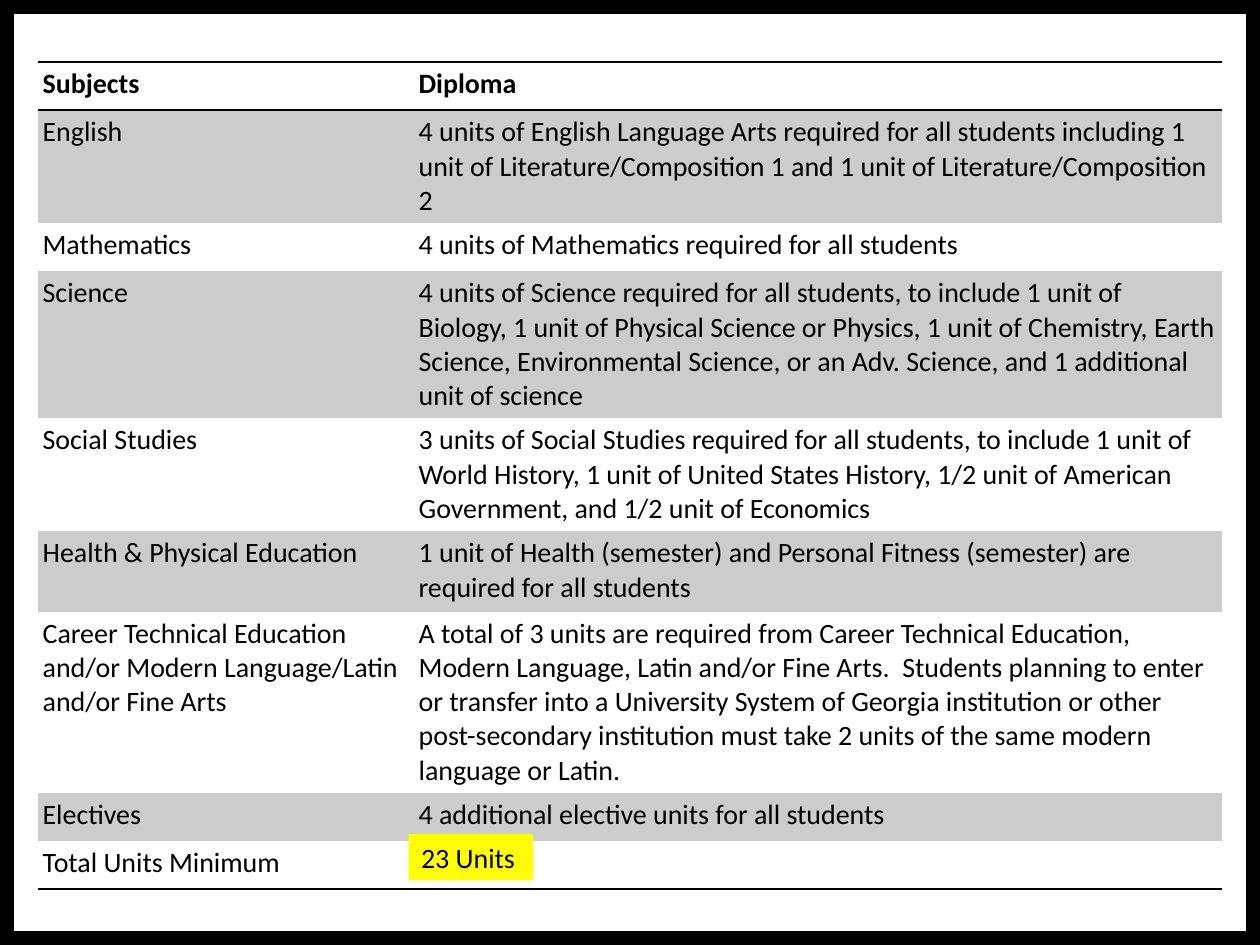
from lxml.etree import SubElement as Sub
from pptx import Presentation
from pptx.dml.color import RGBColor
from pptx.enum.shapes import MSO_SHAPE as Kind
from pptx.enum.text import MSO_ANCHOR as Anchor, PP_ALIGN as Align
from pptx.oxml.ns import qn
from pptx.util import Cm, Pt

BLACK, GREY, YELLOW = "000000", "CCCCCC", "FFFF00"
PLAIN = "{2D5ABB26-0587-4C30-8999-92F81FD0307C}"  # no style, no grid
ROWS = [
    ("Subjects", "Diploma", 0.97),
    ("English", "4 units of English Language Arts required for all students "
     "including 1 unit of Literature/Composition 1 and 1 unit of "
     "Literature/Composition 2", 2.28),
    ("Mathematics", "4 units of Mathematics required for all students", 0.97),
    ("Science", "4 units of Science required for all students, to include "
     "1 unit of Biology, 1 unit of Physical Science or Physics, 1 unit of "
     "Chemistry, Earth Science, Environmental Science, or an Adv. Science, "
     "and 1 additional unit of science", 2.95),
    ("Social Studies", "3 units of Social Studies required for all students, "
     "to include 1 unit of World History, 1 unit of United States History, "
     "1/2 unit of American Government, and 1/2 unit of Economics", 2.28),
    ("Health & Physical Education", "1 unit of Health (semester) and Personal "
     "Fitness (semester) are required for all students", 1.62),
    ("Career Technical Education and/or Modern Language/Latin and/or Fine Arts",
     "A total of 3 units are required from Career Technical Education, Modern "
     "Language, Latin and/or Fine Arts.  Students planning to enter or "
     "transfer into a University System of Georgia institution or other "
     "post-secondary institution must take 2 units of the same modern "
     "language or Latin.", 3.65),
    ("Electives", "4 additional elective units for all students", 0.97),
    ("Total Units Minimum", "23 units", 0.97),
]


def color(code):
    return RGBColor.from_string(code)


def write(frame, text, bold=False):
    para = frame.paragraphs[0]
    para.alignment = Align.LEFT
    run = para.add_run()
    run.text = text
    font = run.font
    font.name, font.size, font.bold = "Calibri", Pt(16), bold
    font.color.rgb = color(BLACK)


def rule(cell, side):
    line = Sub(cell._tc.get_or_add_tcPr(), qn("a:" + side), w=str(Pt(1)))
    Sub(Sub(line, qn("a:solidFill")), qn("a:srgbClr"), val=BLACK)


def units_table(slide, left, top, width):
    high = sum(row[2] for row in ROWS)
    table = slide.shapes.add_table(len(ROWS), 2, Cm(left), Cm(top),
                                   Cm(width), Cm(high)).table
    table._tbl.tblPr.find(qn("a:tableStyleId")).text = PLAIN
    table.first_row = table.horz_banding = False
    first = 7.58
    table.columns[0].width = Cm(first)
    table.columns[1].width = Cm(width - first)
    last = len(ROWS) - 1
    for i, (*texts, tall) in enumerate(ROWS):
        table.rows[i].height = Cm(tall)
        for j, text in enumerate(texts):
            cell = table.cell(i, j)
            cell.margin_left = cell.margin_right = Cm(0.1)
            cell.margin_top = cell.margin_bottom = Cm(0.1)
            # Rules around the header and under the total
            if i == 0:
                rule(cell, "lnT")
            if i in (0, last):
                rule(cell, "lnB")
            # Every second row is shaded
            if i % 2:
                cell.fill.solid()
                cell.fill.fore_color.rgb = color(GREY)
            else:
                cell.fill.background()
            write(cell.text_frame, text, bold=i == 0)


def total_tag(slide, left, top, width, height):
    tag = slide.shapes.add_shape(Kind.RECTANGLE, Cm(left), Cm(top),
                                 Cm(width), Cm(height))
    tag.shadow.inherit = False
    tag.fill.solid()
    tag.fill.fore_color.rgb = color(YELLOW)
    tag.line.fill.background()
    frame = tag.text_frame
    frame.word_wrap = True
    frame.vertical_anchor = Anchor.TOP
    write(frame, "23 Units")


def border(slide, width, height):
    edge = slide.shapes.add_shape(Kind.RECTANGLE, 0, 0, width, height)
    edge.shadow.inherit = False
    edge.fill.background()
    edge.line.color.rgb = color(BLACK)
    edge.line.width = Pt(16)


def main():
    deck = Presentation()
    deck.slide_width, deck.slide_height = Cm(25.4), Cm(19.05)
    slide = deck.slides.add_slide(deck.slide_layouts[6])
    units_table(slide, 0.76, 1.25, 23.87)
    total_tag(slide, 8.24, 16.81, 2.51, 0.94)
    border(slide, deck.slide_width, deck.slide_height)
    deck.save("out.pptx")


if __name__ == "__main__":
    main()
